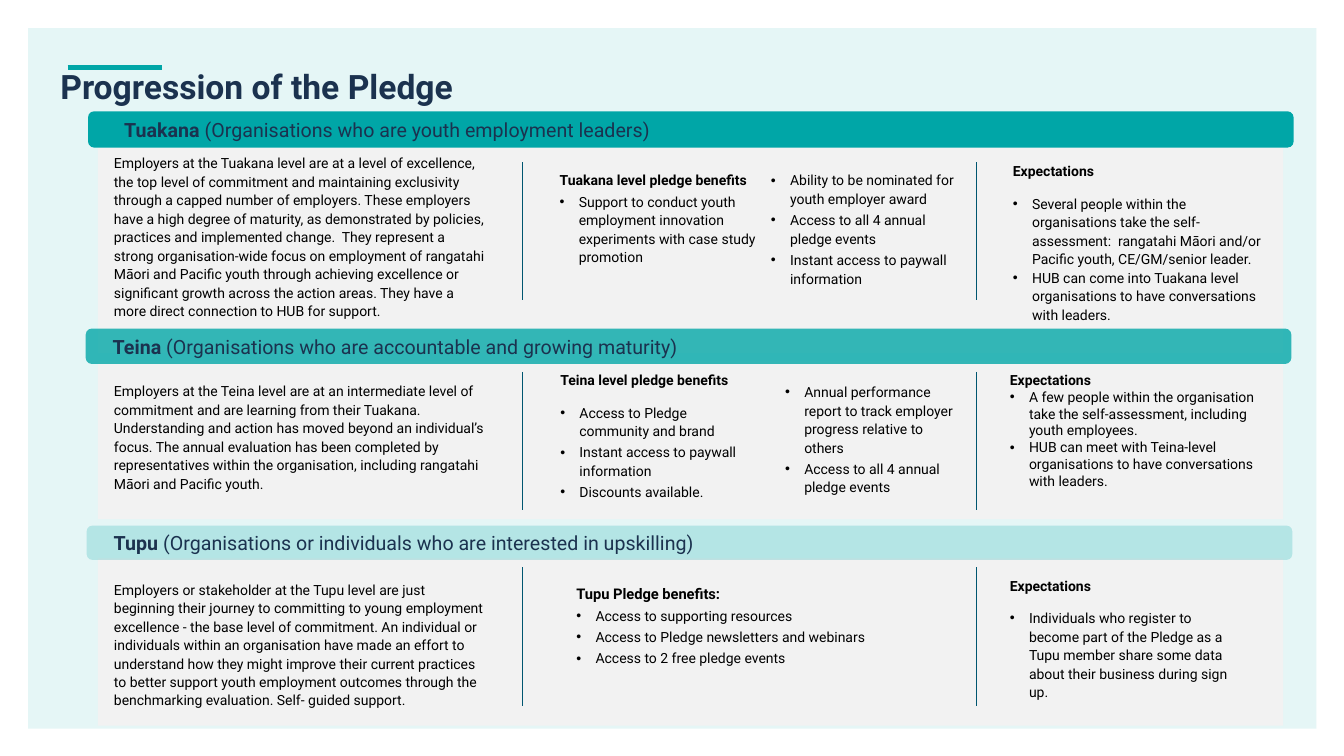
from lxml.etree import SubElement
from pptx import Presentation
from pptx.dml.color import RGBColor
from pptx.enum.shapes import MSO_CONNECTOR as Connector, MSO_SHAPE as Shape
from pptx.enum.text import MSO_ANCHOR as Anchor, PP_ALIGN as Align
from pptx.oxml.ns import qn
from pptx.util import Inches, Pt

WIDTH, HEIGHT = Inches(13.33), Inches(7.5)
TEAL, NAVY, PETROL, BLACK = "00A6A7", "1B324F", "005670", "000000"
MINT, GREY = "E5F6F6", "F2F2F2"
PANEL_LEFT, PANEL_WIDTH, BAND_WIDTH = 7.28, 88.2, 89.7
DIVIDERS, DIVIDER_HEIGHT = (38.89, 72.68), 18.27

LEVELS = [
    {
        "name": "Tuakana", "audience": "(Organisations who are youth employment leaders)",
        "band": (6.55, 14.73, 4.8), "inset": 0.34, "opacity": 100,
        "panel": (17.6, 29.07), "anchor": Anchor.TOP, "divider": 21.47,
        "about": "Employers at the Tuakana level are at a level of excellence, the top level of commitment and maintaining exclusivity through a capped number of employers. These employers have a high degree of maturity, as demonstrated by policies, practices and implemented change.  They represent a strong organisation-wide focus on employment of rangatahi Māori and Pacific youth through achieving excellence or significant growth across the action areas. They have a more direct connection to HUB for support.",
    },
    {
        "name": "Teina", "audience": "(Organisations who are accountable and growing maturity)",
        "band": (6.38, 43.47, 4.67), "inset": 0.25, "opacity": 79,
        "panel": (47.73, 20.93), "anchor": Anchor.TOP, "divider": 49.2,
        "about": "Employers at the Teina level are at an intermediate level of commitment and are learning from their Tuakana. Understanding and action has moved beyond an individual’s focus. The annual evaluation has been completed by representatives within the organisation, including rangatahi Māori and Pacific youth.",
    },
    {
        "name": "Tupu", "audience": "(Organisations or individuals who are interested in upskilling)",
        "band": (6.45, 69.53, 4.53), "inset": 0.25, "opacity": 21,
        "panel": (73.87, 22.13), "anchor": Anchor.MIDDLE, "divider": 75.07,
        "about": "Employers or stakeholder at the Tupu level are just beginning their journey to committing to young employment excellence - the base level of commitment. An individual or individuals within an organisation have made an effort to understand how they might improve their current practices to better support youth employment outcomes through the benchmarking evaluation. Self- guided support.",
    },
]


def color(value):
    return RGBColor.from_string(value)


def place(left, top, width, height):
    return (int(WIDTH * left / 100), int(HEIGHT * top / 100),
            int(WIDTH * width / 100), int(HEIGHT * height / 100))


def set_font(font, size, fill=BLACK, bold=False):
    font.name, font.size, font.bold = "Roboto", Pt(size), bold
    font.color.rgb = color(fill)


def add_block(page, kind, area, fill, opacity=100):
    block = page.shapes.add_shape(kind, *place(*area))
    block.shadow.inherit = False
    block.line.fill.background()
    block.fill.solid()
    block.fill.fore_color.rgb = color(fill)
    if opacity < 100:
        shade = block.fill._xPr.find(qn("a:solidFill"))[0]
        SubElement(shade, qn("a:alpha"), val=str(opacity * 1000))
    return block


def set_insets(frame, left, top, right, bottom):
    frame.margin_left, frame.margin_top = Inches(left), Inches(top)
    frame.margin_right, frame.margin_bottom = Inches(right), Inches(bottom)


def add_line(page, left, top, width, height, stroke, weight):
    x, y, across, down = place(left, top, width, height)
    line = page.shapes.add_connector(Connector.STRAIGHT, x, y, x + across, y + down)
    line.line.color.rgb = color(stroke)
    line.line.width = Pt(weight)
    SubElement(line._element.spPr, qn("a:effectLst"))


def add_panel(page, level):
    top, height = level["panel"]
    panel = add_block(page, Shape.RECTANGLE, (PANEL_LEFT, top, PANEL_WIDTH, height), GREY)
    frame = panel.text_frame
    frame.word_wrap = True
    frame.vertical_anchor = level["anchor"]
    upper = 0.2 if level["anchor"] == Anchor.TOP else 0.08
    set_insets(frame, 0.16, upper, 7.89, 0.04)
    para = frame.paragraphs[0]
    para.text = level["about"]
    para.alignment = Align.LEFT
    para.line_spacing = 1.1
    set_font(para.font, 10)


def add_band(page, level):
    left, top, height = level["band"]
    band = add_block(page, Shape.ROUNDED_RECTANGLE, (left, top, BAND_WIDTH, height),
                     TEAL, level["opacity"])
    frame = band.text_frame
    frame.word_wrap = True
    frame.vertical_anchor = Anchor.MIDDLE
    set_insets(frame, level["inset"], 0.04, 0.08, 0.04)
    para = frame.paragraphs[0]
    para.alignment = Align.LEFT
    for words, bold in ((level["name"] + " ", True), (level["audience"], False)):
        span = para.add_run()
        span.text = words
        set_font(span.font, 14, NAVY, bold)


def add_bullet(para):
    props = para._p.get_or_add_pPr()
    props.set("marL", str(Inches(0.19)))
    props.set("indent", str(-Inches(0.19)))
    SubElement(props, qn("a:buFont"), typeface="Arial")
    SubElement(props, qn("a:buChar"), char="•")


def add_list(page, area, heading, items, first_gap=2, gap=2, spacing=1.1, heading_size=10):
    box = page.shapes.add_textbox(*place(*area))
    frame = box.text_frame
    frame.word_wrap = True
    lines = ([heading] if heading else []) + items
    for index, words in enumerate(lines):
        para = frame.paragraphs[0] if index == 0 else frame.add_paragraph()
        para.text = words
        is_heading = bool(heading) and index == 0
        if not is_heading:
            add_bullet(para)
        para.line_spacing = 1.1 if is_heading else spacing
        if index:
            para.space_before = Pt(first_gap if heading and index == 1 else gap)
        set_font(para.font, heading_size if is_heading else 10, bold=is_heading)


def add_title(page):
    add_line(page, 5.03, 8.93, 7.05, 0, TEAL, 3)
    box = page.shapes.add_textbox(*place(3.75, 8, 41.7, 6.67))
    box.text_frame.word_wrap = True
    para = box.text_frame.paragraphs[0]
    para.text = "Progression of the Pledge"
    set_font(para.font, 24, NAVY, True)


def add_benefits(page):
    add_list(page, (40.9, 21.87, 16.5, 19.2), "Tuakana level pledge benefits", [
        "Support to conduct youth employment innovation experiments with case study promotion"])
    add_list(page, (56.62, 21.87, 15.98, 19.2), None, [
        "Ability to be nominated for youth employer award",
        "Access to all 4 annual pledge events",
        "Instant access to paywall information"])
    add_list(page, (40.95, 48.27, 14.78, 15.73), "Teina level pledge benefits", [
        "Access to Pledge community and brand",
        "Instant access to paywall information",
        "Discounts available."], first_gap=10)
    add_list(page, (57.68, 49.87, 14.78, 14.27), None, [
        "Annual performance report to track employer progress relative to others",
        "Access to all 4 annual pledge events"])
    add_list(page, (42.15, 76.53, 28.95, 15.2), "Tupu Pledge benefits:", [
        "Access to supporting resources",
        "Access to Pledge newsletters and webinars",
        "Access to 2 free pledge events"], heading_size=10.5)


def add_expectations(page):
    add_list(page, (74.63, 20.67, 20.03, 25.6), "Expectations", [
        "Several people within the organisations take the self-assessment:  rangatahi Māori and/or Pacific youth, CE/GM/senior leader.",
        "HUB can come into Tuakana level organisations to have conversations with leaders."],
        first_gap=10, gap=0)
    add_list(page, (74.4, 48.27, 20.03, 20), "Expectations", [
        "A few people within the organisation take the self-assessment, including youth employees.",
        "HUB can meet with Teina-level organisations to have conversations with leaders."],
        first_gap=0, gap=0, spacing=1)
    add_list(page, (74.4, 75.47, 18.6, 13.33), "Expectations", [
        "Individuals who register to become part of the Pledge as a Tupu member share some data about their business during sign up."],
        first_gap=10)


def main():
    deck = Presentation()
    deck.slide_width, deck.slide_height = WIDTH, HEIGHT
    page = deck.slides.add_slide(deck.slide_layouts[6])
    add_block(page, Shape.RECTANGLE, (2.1, 3.73, 95.85, 92.67), MINT)
    add_title(page)
    for level in LEVELS:
        add_panel(page, level)
    for level in LEVELS:
        add_band(page, level)
        for left in DIVIDERS:
            add_line(page, left, level["divider"], 0, DIVIDER_HEIGHT, PETROL, 0.75)
    add_benefits(page)
    add_expectations(page)
    deck.save("out.pptx")


if __name__ == "__main__":
    main()
